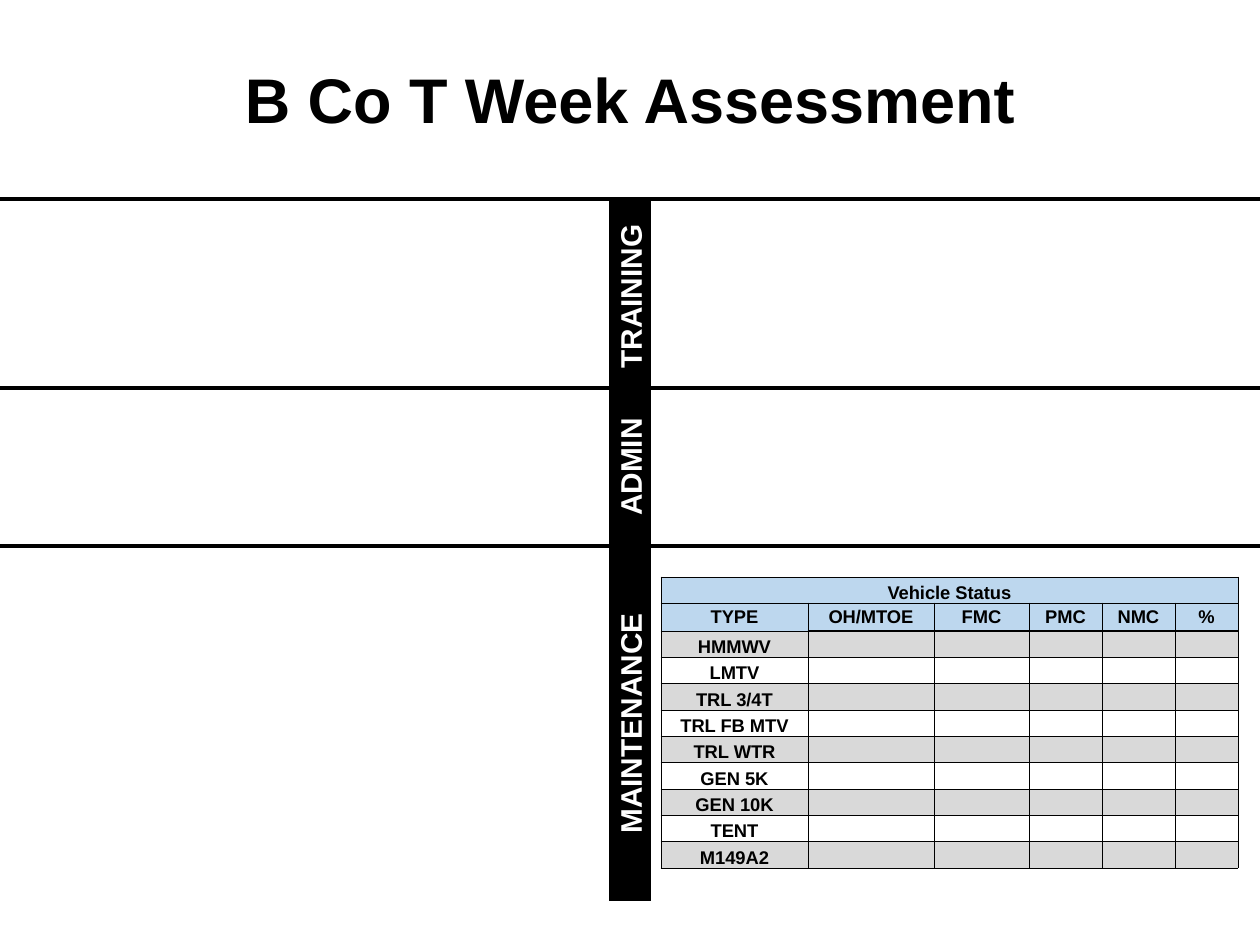
from lxml.etree import SubElement
from pptx import Presentation
from pptx.dml.color import RGBColor
from pptx.enum.shapes import MSO_CONNECTOR, MSO_SHAPE
from pptx.enum.text import MSO_ANCHOR, PP_ALIGN
from pptx.oxml.ns import qn
from pptx.util import Inches, Pt

PX = Inches(1) / 126
COLORS = {"black": "000000", "white": "FFFFFF", "header": "BDD7EE", "band": "D9D9D9"}


def px(length):
    return round(length * PX)


def write(text_frame, text, size, color="black", anchor=MSO_ANCHOR.MIDDLE, before=0):
    """Fill the frame with one centred bold line; an empty one only gets its size."""
    text_frame.word_wrap = True
    text_frame.vertical_anchor = anchor
    paragraph = text_frame.paragraphs[0]
    paragraph.alignment = PP_ALIGN.CENTER
    paragraph.space_before = Pt(before)
    if not text:
        paragraph._p.get_or_add_endParaRPr().set("sz", str(round(size * 100)))
        return
    run = paragraph.add_run()
    run.text = text
    run.font.name = "Arial"
    run.font.size = Pt(size)
    run.font.bold = True
    run.font.color.rgb = RGBColor.from_string(COLORS[color])


presentation = Presentation()
presentation.slide_width = px(1260)
presentation.slide_height = px(945)
slide = presentation.slides.add_slide(presentation.slide_layouts[6])

title = slide.shapes.add_textbox(px(63), px(38), px(1134), px(120))
write(title.text_frame, "B Co T Week Assessment", 36)

# Sections: a rule across the slide and a label bar turned to read upwards
BAR_CENTER, BAR_WIDTH = 630, 42
sections = [("TRAINING", 199, 394), ("ADMIN", 388, 546), ("MAINTENANCE", 546, 901)]
for label, top, bottom in sections:
    rule = slide.shapes.add_connector(MSO_CONNECTOR.STRAIGHT, 0, px(top), px(1260), px(top))
    rule.line.color.rgb = RGBColor.from_string(COLORS["black"])
    rule.line.width = Pt(2.25)
    SubElement(rule._element.spPr, qn("a:effectLst"))

    length = bottom - top
    bar = slide.shapes.add_shape(
        MSO_SHAPE.RECTANGLE,
        px(BAR_CENTER - length / 2), px((top + bottom - BAR_WIDTH) / 2),
        px(length), px(BAR_WIDTH),
    )
    bar.rotation = 270
    bar.shadow.inherit = False
    bar.fill.solid()
    bar.fill.fore_color.rgb = RGBColor.from_string(COLORS["black"])
    bar.line.fill.background()
    write(bar.text_frame, label, 17, color="white", before=3.4)

# Vehicle status table
headings = ["TYPE", "OH/MTOE", "FMC", "PMC", "NMC", "%"]
vehicles = ["HMMWV", "LMTV", "TRL 3/4T", "TRL FB MTV", "TRL WTR",
            "GEN 5K", "GEN 10K", "TENT", "M149A2"]
rows = [["Vehicle Status"], headings] + [[vehicle] for vehicle in vehicles]
column_widths = [147, 126, 95, 73, 73, 63]
row_heights = [26, 28] + [26, 26, 27] * 3

table = slide.shapes.add_table(
    len(rows), len(headings), px(661), px(577),
    px(sum(column_widths)), px(sum(row_heights)),
).table
table.first_row = False
table.horz_banding = False
for column, width in zip(table.columns, column_widths):
    column.width = px(width)
for row, height in zip(table.rows, row_heights):
    row.height = px(height)
table.cell(0, 0).merge(table.cell(0, len(headings) - 1))

for row_index, texts in enumerate(rows):
    if row_index < 2:
        fill = "header"
    else:
        fill = "white" if row_index % 2 else "band"
    anchor = MSO_ANCHOR.MIDDLE if row_index == 1 else MSO_ANCHOR.BOTTOM
    for column_index in range(len(headings)):
        cell = table.cell(row_index, column_index)
        cell.margin_left = cell.margin_right = cell.margin_top = px(1)
        cell.margin_bottom = 0
        cell.vertical_anchor = anchor
        text = texts[column_index] if column_index < len(texts) else ""
        write(cell.text_frame, text, 10.5, anchor=anchor)

        properties = cell._tc.get_or_add_tcPr()
        for side in ("L", "R", "T", "B"):
            under_headings = (row_index, side) in ((1, "B"), (2, "T")) and column_index > 0
            border = SubElement(properties, qn(f"a:ln{side}"))
            border.set("w", str(Pt(1 if under_headings else 0.5)))
            border_fill = SubElement(border, qn("a:solidFill"))
            SubElement(border_fill, qn("a:srgbClr")).set("val", COLORS["black"])
        cell.fill.solid()
        cell.fill.fore_color.rgb = RGBColor.from_string(COLORS[fill])

presentation.save("out.pptx")
